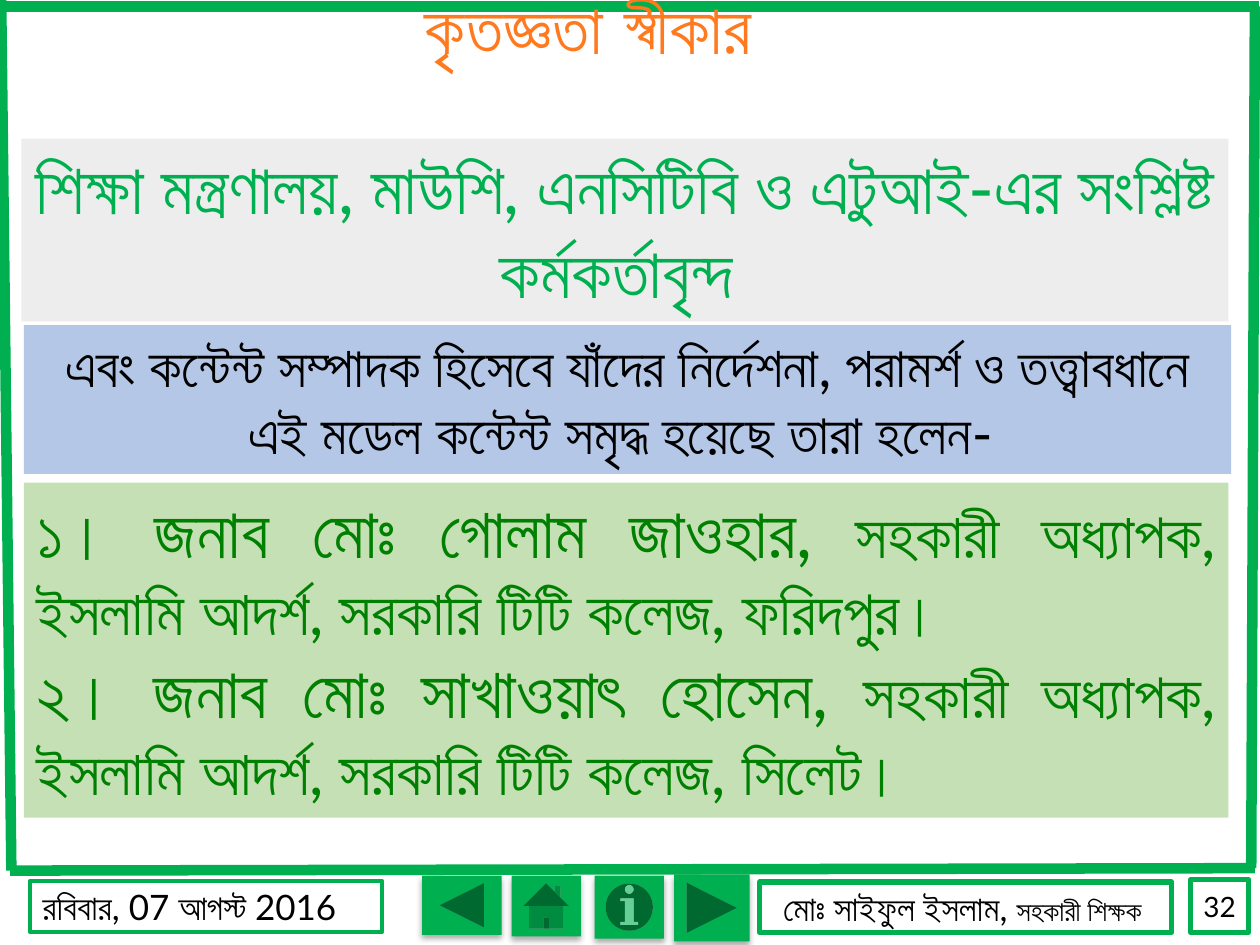
from lxml import etree
from pptx import Presentation
from pptx import util as u
from pptx.dml.color import RGBColor
from pptx.enum import shapes, text
from pptx.oxml import ns

GREEN = RGBColor(0x00, 0xB0, 0x50)
DARK_GREEN = RGBColor(0x00, 0x80, 0x00)
ORANGE = RGBColor(0xFF, 0x7A, 0x1F)
BLACK = RGBColor(0x00, 0x00, 0x00)
PALE_BLUE = RGBColor(0xB4, 0xC7, 0xE7)
PALE_GREEN = RGBColor(0xC5, 0xE0, 0xB4)
PALE_GREY = RGBColor(0xED, 0xED, 0xED)

LEFT, CENTER, JUSTIFY = text.PP_ALIGN.LEFT, text.PP_ALIGN.CENTER, text.PP_ALIGN.JUSTIFY
TOP, MIDDLE = text.MSO_ANCHOR.TOP, text.MSO_ANCHOR.MIDDLE
BUTTON = shapes.MSO_SHAPE

NAVIGATION = [
    (BUTTON.ACTION_BUTTON_BACK_OR_PREVIOUS, (241.2, 500.4, 45.4, 33.8)),
    (BUTTON.ACTION_BUTTON_HOME, (292.3, 500.4, 39.6, 34.6)),
    (BUTTON.ACTION_BUTTON_INFORMATION, (339.8, 500.4, 39.6, 36)),
    (BUTTON.ACTION_BUTTON_FORWARD_OR_NEXT, (385.2, 499.7, 43.2, 38.2)),
]
FRAME = [
    (0.7, 0, 6.5, 497.5),
    (717.1, 3.6, 715, 496.1),
    (0, 3.6, 719.3, 3.6),
    (5.8, 497.5, 717.1, 496.1),
]


def points(lengths):
    """Turn numbers into point lengths."""
    return [u.Pt(length) for length in lengths]


def add_effects(element):
    """Append an empty effect list to a shape's properties."""
    return etree.SubElement(element.spPr, ns.qn("a:effectLst"))


def add_button(page, kind, place):
    """Add a green navigation button with a soft shadow below it."""
    button = page.shapes.add_shape(kind, *points(place))
    button.fill.solid()
    button.fill.fore_color.rgb = GREEN
    button.line.fill.background()
    shadow = etree.SubElement(
        add_effects(button._element), ns.qn("a:outerShdw"),
        blurRad=str(u.Pt(3.5)), dist=str(u.Pt(2.2)), dir="5400000", rotWithShape="0")
    color = etree.SubElement(shadow, ns.qn("a:srgbClr"), val="000000")
    etree.SubElement(color, ns.qn("a:alpha"), val="32000")


def add_frame_line(page, ends):
    """Add one side of the green page frame."""
    line = page.shapes.add_connector(shapes.MSO_CONNECTOR.STRAIGHT, *points(ends))
    line.line.color.rgb = GREEN
    line.line.width = u.Pt(6)
    add_effects(line._element)


def write(box, paragraphs, *, color=BLACK, align=CENTER, anchor=TOP, wrap=True, bold=False):
    """Fill a box with paragraphs, each a list of (text, size) spans."""
    frame = box.text_frame
    frame.word_wrap = wrap
    frame.auto_size = text.MSO_AUTO_SIZE.NONE
    frame.vertical_anchor = anchor
    for index, spans in enumerate(paragraphs):
        para = frame.add_paragraph() if index else frame.paragraphs[0]
        para.alignment = align
        for words, size in spans:
            span = para.add_run()
            span.text = words
            span.font.name = "Lato"
            span.font.size = u.Pt(size)
            span.font.bold = bold
            span.font.color.rgb = color


def add_box(page, place, paragraphs, *, fill=None, border=None, **style):
    """Add a rectangle with text and an optional fill or green border."""
    box = page.shapes.add_shape(shapes.MSO_SHAPE.RECTANGLE, *points(place))
    box.shadow.inherit = False
    if fill is None:
        box.fill.background()
    else:
        box.fill.solid()
        box.fill.fore_color.rgb = fill
    if border is None:
        box.line.fill.background()
    else:
        box.line.color.rgb = GREEN
        box.line.width = u.Pt(border)
    write(box, paragraphs, **style)


def add_title(page, place, words):
    """Place the title above the frame and format it."""
    title = page.shapes.title
    title.left, title.top, title.width, title.height = points(place)
    write(title, [[(words, 40)]], color=ORANGE, align=LEFT, bold=True)
    for span in title.text_frame.paragraphs[0].runs:
        span.font._element.set("spc", "50")
    page.shapes._spTree.append(title._element)


def main():
    """Build the acknowledgement slide."""
    deck = Presentation()
    deck.slide_width, deck.slide_height = points((720, 540))
    page = deck.slides.add_slide(deck.slide_layouts[5])

    for kind, place in NAVIGATION:
        add_button(page, kind, place)
    for ends in FRAME:
        add_frame_line(page, ends)

    add_box(page, (434.2, 504, 235.4, 28.8),
            [[("মোঃ সাইফুল ইসলাম, ", 20), ("সহকারী শিক্ষক ", 16)]],
            border=3, anchor=MIDDLE)
    add_box(page, (17.3, 503.3, 200.9, 29.5), [[("রবিবার, 07 আগস্ট 2016", 20)]],
            border=2.25, align=LEFT, anchor=MIDDLE)
    add_box(page, (680.4, 502.6, 33.1, 30.2), [[("32", 16)]],
            border=3, anchor=MIDDLE, wrap=False)

    add_title(page, (235.4, -12.2, 246.2, 91.4), "কৃতজ্ঞতা স্বীকার")
    add_box(page, (13.7, 185.8, 689.8, 85),
            [[("এবং কন্টেন্ট সম্পাদক হিসেবে যাঁদের নির্দেশনা, পরামর্শ ও তত্ত্বাবধানে "
               "এই মডেল কন্টেন্ট সমৃদ্ধ হয়েছে তারা হলেন- ", 32)]],
            fill=PALE_BLUE)
    add_box(page, (13.7, 275.8, 688.3, 191.5),
            [[("১। জনাব মোঃ গোলাম জাওহার, ", 40),
              ("সহকারী অধ্যাপক, ইসলামি আদর্শ, সরকারি টিটি কলেজ, ফরিদপুর।", 36)],
             [("২। জনাব মোঃ সাখাওয়াৎ হোসেন, ", 40),
              ("সহকারী অধ্যাপক, ইসলামি আদর্শ, সরকারি টিটি কলেজ, সিলেট।", 36)]],
            fill=PALE_GREEN, color=DARK_GREEN, align=JUSTIFY)
    add_box(page, (12.2, 79.2, 689.8, 104.4),
            [[("শিক্ষা মন্ত্রণালয়, মাউশি, এনসিটিবি ও এটুআই-এর সংশ্লিষ্ট কর্মকর্তাবৃন্দ ", 40)]],
            fill=PALE_GREY, color=GREEN)

    deck.save("out.pptx")


if __name__ == "__main__":
    main()
